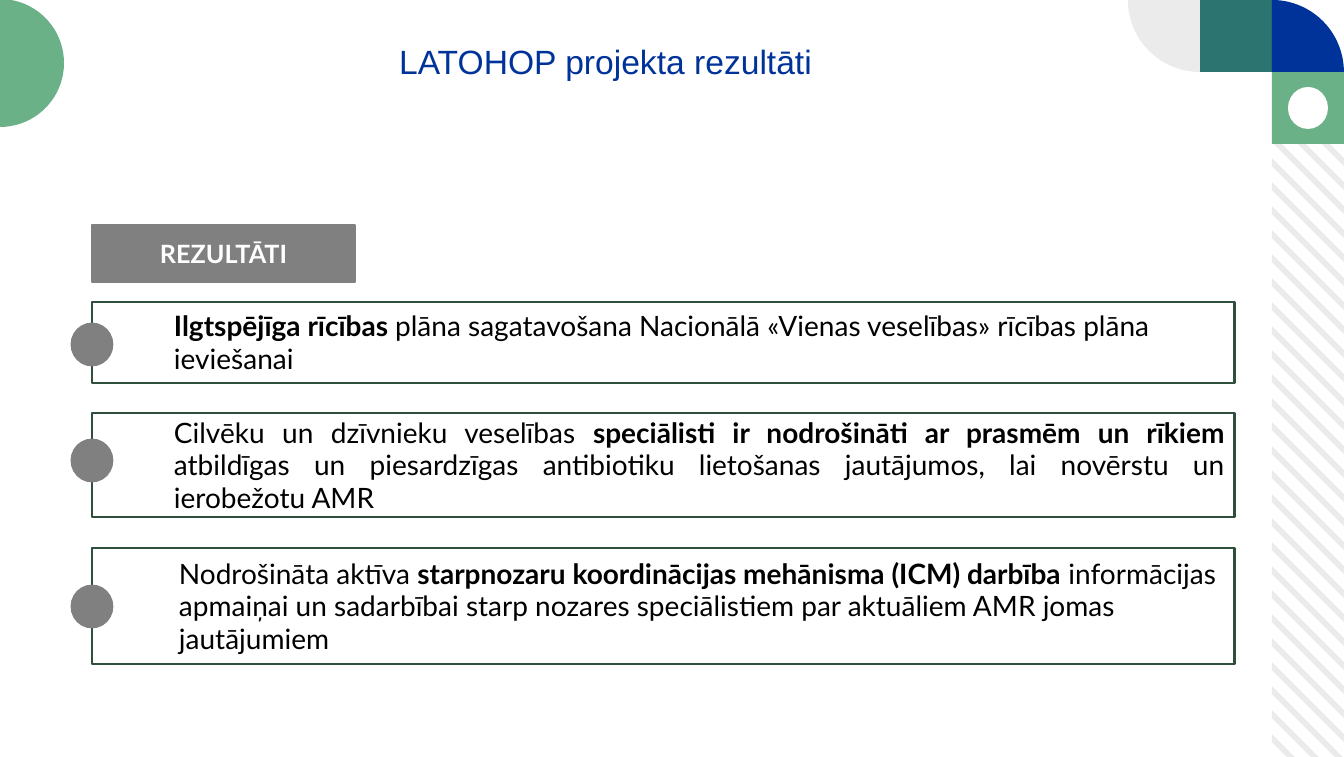
import math
import pptx
import pptx.util
import pptx.dml.color
import pptx.enum.shapes
import pptx.enum.text

KIND = pptx.enum.shapes.MSO_SHAPE
ALIGN = pptx.enum.text.PP_ALIGN
ANCHOR = pptx.enum.text.MSO_ANCHOR
PX = 914400 / 100.8
WIDE, HIGH = 1344, 757
HUES = {
    "white": "FFFFFF", "black": "000000", "pale": "ECEBEB", "teal": "2C7470",
    "green": "6BB188", "blue": "003399", "forest": "2F4E3C", "grey": "808080",
}


def emu(px):
    return pptx.util.Emu(round(px * PX))


def hue(name):
    return pptx.dml.color.RGBColor.from_string(HUES[name])


def sector(x, y, radius, start, sweep):
    """Centre and arc points; angles in degrees, clockwise from the right."""
    turns = [math.radians(start + sweep * i / 40) for i in range(41)]
    return [(x, y)] + [(x + radius * math.cos(t), y + radius * math.sin(t)) for t in turns]


class Deck:
    def __init__(self):
        self.show = pptx.Presentation()
        self.show.slide_width, self.show.slide_height = emu(WIDE), emu(HIGH)
        self.slide = self.show.slides.add_slide(self.show.slide_layouts[6])

    def paint(self, shape, fill, line=None):
        shape.shadow.inherit = False
        shape.fill.solid()
        shape.fill.fore_color.rgb = hue(fill)
        if line:
            shape.line.color.rgb = hue(line)
            shape.line.width = pptx.util.Pt(2)
        else:
            shape.line.fill.background()
        return shape

    def shape(self, kind, x, y, w, h, fill, line=None):
        item = self.slide.shapes.add_shape(kind, emu(x), emu(y), emu(w), emu(h))
        return self.paint(item, fill, line)

    def outline(self, paths, fill):
        pen = None
        for path in paths:
            first, *rest = [(emu(x), emu(y)) for x, y in path]
            if pen is None:
                pen = self.slide.shapes.build_freeform(*first)
            else:
                pen.move_to(*first)
            pen.add_line_segments(rest, close=True)
        return self.paint(pen.convert_to_shape(), fill)

    def label(self, shape, runs, size, font, color, align, anchor=ANCHOR.MIDDLE,
              inset=10, pitch=None):
        frame = shape.text_frame
        frame.word_wrap = True
        frame.vertical_anchor = anchor
        frame.margin_left = emu(inset)
        para = frame.paragraphs[0]
        para.alignment = align
        if pitch:
            para.line_spacing = pptx.util.Pt(pitch)
        for text, bold in runs:
            run = para.add_run()
            run.text = text
            run.font.size = pptx.util.Pt(size)
            run.font.name = font
            run.font.bold = bold
            run.font.color.rgb = hue(color)

    def title(self, x, y, w, h, text):
        box = self.slide.shapes.add_textbox(emu(x), emu(y), emu(w), emu(h))
        self.label(box, [(text, False)], 24, "Arial", "blue", ALIGN.CENTER, ANCHOR.BOTTOM)

    def result(self, y, h, dot, inset, align, runs):
        box = self.shape(KIND.RECTANGLE, 92, y, 1143, h, "white", "forest")
        self.label(box, runs, 20, "Lato", "black", align, inset=inset, pitch=23.3)
        self.shape(KIND.FLOWCHART_CONNECTOR, 72, dot, 40, 41, "grey", "grey")


TILE = 72
EDGE = WIDE - TILE


def stripes():
    """Diagonal bands, clipped to the column under the corner tiles."""
    top = 2 * TILE

    def ends(y):
        left = (EDGE, y) if y >= top else (EDGE + top - y, top)
        right = (WIDE, y + TILE) if y + TILE <= HIGH else (EDGE + HIGH - y, HIGH)
        return left, right

    paths = []
    for y in range(86, HIGH - 8, 24):
        (a, b), (c, d) = ends(y), ends(y + 8)
        paths.append([a, b, d, c])
    return paths


def main():
    deck = Deck()

    # Striped column and corner tiles
    deck.outline(stripes(), "pale")
    deck.shape(KIND.RECTANGLE, EDGE - TILE, 0, TILE, TILE, "teal")
    deck.shape(KIND.RECTANGLE, EDGE, TILE, TILE, TILE, "green")
    deck.outline([sector(EDGE, TILE, TILE, 270, 90)], "blue")
    deck.outline([sector(EDGE - TILE, 0, TILE, 90, 90)], "pale")
    deck.shape(KIND.OVAL, 1288, 87, 40, 42, "white")

    # Half disc and title
    deck.outline([sector(0, 63, 64, -90, 180)], "green")
    deck.title(84, 34, 1043, 52, "LATOHOP projekta rezultāti")

    # Results
    deck.result(302, 81, 324, 82, ALIGN.LEFT, [
        ("Ilgtspējīga rīcības ", True),
        ("plāna sagatavošana Nacionālā «Vienas veselības» rīcības plāna ieviešanai", False),
    ])
    deck.result(413, 104, 440, 82, ALIGN.JUSTIFY, [
        ("Cilvēku un dzīvnieku veselības ", False),
        ("speciālisti ir nodrošināti ar prasmēm un rīkiem ", True),
        ("atbildīgas un piesardzīgas antibiotiku lietošanas jautājumos, "
         "lai novērstu un ierobežotu AMR", False),
    ])
    deck.result(548, 116, 586, 87, ALIGN.LEFT, [
        ("Nodrošināta aktīva ", False),
        ("starpnozaru koordinācijas mehānisma (ICM) darbība", True),
        (" informācijas apmaiņai un sadarbībai starp nozares speciālistiem "
         "par aktuāliem AMR jomas jautājumiem", False),
    ])

    # Heading label
    head = deck.shape(KIND.RECTANGLE, 92, 225, 263, 57, "grey", "grey")
    deck.label(head, [("REZULTĀTI", True)], 18, "Lato", "white", ALIGN.CENTER)

    deck.show.save("out.pptx")


if __name__ == "__main__":
    main()
